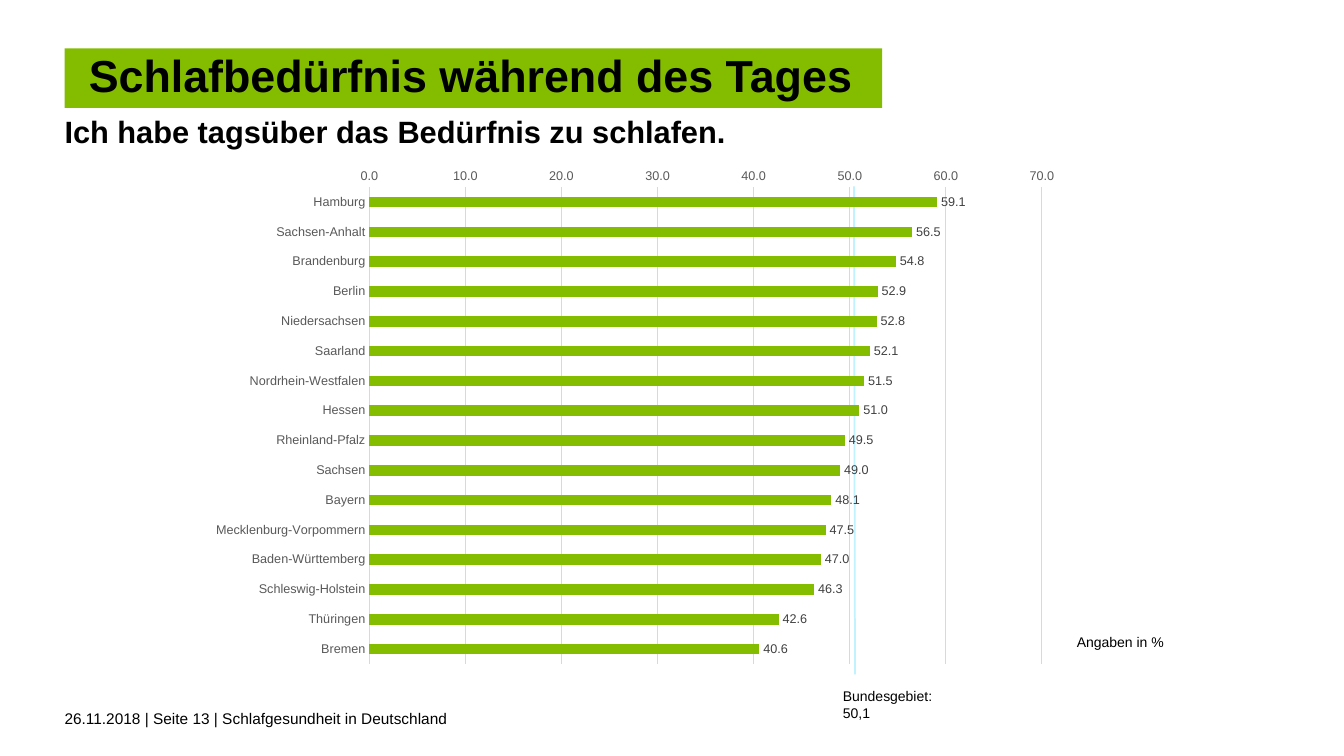
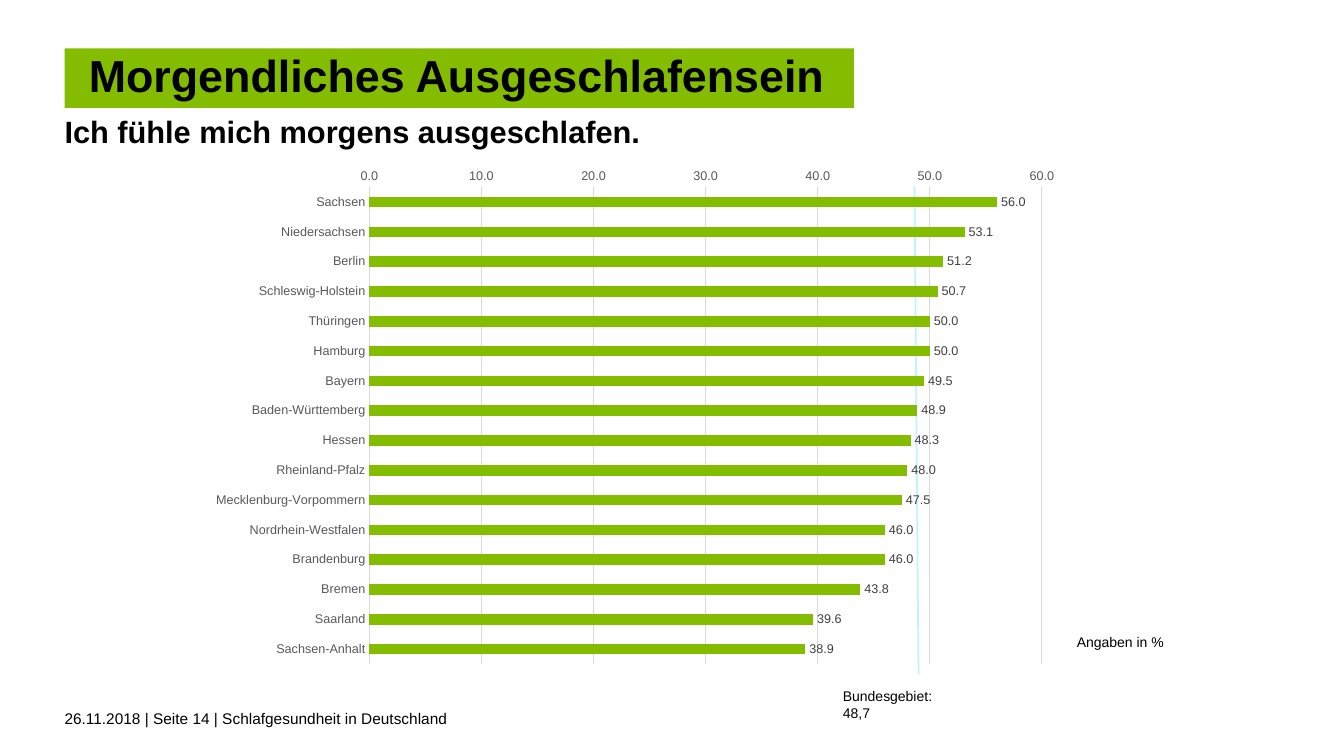
"""Build two bar-chart slides on sleep by German federal state."""
from pptx import Presentation
from pptx import util as u
from pptx.chart.data import CategoryChartData
from pptx.dml.color import RGBColor
from pptx.enum import chart as charts, shapes, text
from pptx.oxml import parse_xml
from pptx.oxml.ns import nsdecls, qn

FONT = "Arial"
GREEN, BLACK, LIGHT_BLUE = "84BD00", "000000", "C1F2FF"
AXIS_TEXT, LABEL_TEXT, GRID = "595959", "404040", "D9D9D9"
LEFT = 0.64
CHART_BOX = (1.97, 1.57, 8.66, 5.12)

SLIDES = [
    {
        "title": "Schlafbedürfnis während des Tages",
        "title_width": 8.11,
        "statement": "Ich habe tagsüber das Bedürfnis zu schlafen.",
        "page": 13,
        "average": "50,1",
        "average_line": (8.47, 8.48),
        "axis_maximum": 70,
        "values": {
            "Hamburg": 59.1, "Sachsen-Anhalt": 56.5, "Brandenburg": 54.8,
            "Berlin": 52.9, "Niedersachsen": 52.8, "Saarland": 52.1,
            "Nordrhein-Westfalen": 51.5, "Hessen": 51, "Rheinland-Pfalz": 49.5,
            "Sachsen": 49, "Bayern": 48.1, "Mecklenburg-Vorpommern": 47.5,
            "Baden-Württemberg": 47, "Schleswig-Holstein": 46.3,
            "Thüringen": 42.6, "Bremen": 40.6,
        },
    },
    {
        "title": "Morgendliches Ausgeschlafensein",
        "title_width": 7.83,
        "statement": "Ich fühle mich morgens ausgeschlafen.",
        "page": 14,
        "average": "48,7",
        "average_line": (9.07, 9.11),
        "axis_maximum": 60,
        "values": {
            "Sachsen": 56, "Niedersachsen": 53.1, "Berlin": 51.2,
            "Schleswig-Holstein": 50.7, "Thüringen": 50, "Hamburg": 50,
            "Bayern": 49.5, "Baden-Württemberg": 48.9, "Hessen": 48.3,
            "Rheinland-Pfalz": 48, "Mecklenburg-Vorpommern": 47.5,
            "Nordrhein-Westfalen": 46, "Brandenburg": 46, "Bremen": 43.8,
            "Saarland": 39.6, "Sachsen-Anhalt": 38.9,
        },
    },
]


def color(hex_string):
    """Return the colour for a hex string."""
    return RGBColor.from_string(hex_string)


def inches(values):
    """Convert numbers to lengths in inches."""
    return [u.Inches(value) for value in values]


def style_font(font, size, hex_string, bold=False):
    """Set the family, size, colour and weight of a font."""
    font.name = FONT
    font.size = u.Pt(size)
    font.bold = bold
    font.color.rgb = color(hex_string)


def style_line(line, hex_string, width):
    """Set the colour and width of a line."""
    line.color.rgb = color(hex_string)
    line.width = u.Pt(width)


def fill_text(shape, content, size, margins, bold=False, wrap=True):
    """Write one left-aligned paragraph into a fixed-size shape and return it."""
    frame = shape.text_frame
    frame.margin_left, frame.margin_right = inches(margins)
    frame.margin_top = frame.margin_bottom = u.Inches(0.05)
    frame.word_wrap = wrap
    frame.auto_size = text.MSO_AUTO_SIZE.NONE
    frame.text = content
    paragraph = frame.paragraphs[0]
    paragraph.alignment = text.PP_ALIGN.LEFT
    style_font(paragraph.runs[0].font, size, BLACK, bold)
    return paragraph


def place(shape, box):
    """Move and size a shape."""
    shape.left, shape.top, shape.width, shape.height = inches(box)


def add_title(slide, content, width):
    """Format the title placeholder as a green band."""
    title = slide.shapes.title
    place(title, (LEFT, 0.48, width, 0.59))
    title.fill.solid()
    title.fill.fore_color.rgb = color(GREEN)
    paragraph = fill_text(title, content, 32, (0.24, 0.24), bold=True, wrap=False)
    paragraph.line_spacing = 0.9
    title.text_frame.vertical_anchor = text.MSO_ANCHOR.MIDDLE


def add_statement(slide, content):
    """Format the body placeholder as the survey statement."""
    body = slide.placeholders[1]
    place(body, (LEFT, 1.13, 12.05, 0.3))
    paragraph = fill_text(body, content, 22, (0, 0.1), bold=True)
    properties = paragraph._p.get_or_add_pPr()
    properties.set("marL", "0")
    properties.set("indent", "0")
    properties.append(parse_xml(f"<a:buNone {nsdecls('a')}/>"))
    paragraph.line_spacing = u.Pt(21.6)
    paragraph.space_before = u.Pt(0)


def add_label(slide, content, box, size=10, margins=(0.24, 0.24)):
    """Add a small text box."""
    fill_text(slide.shapes.add_textbox(*inches(box)), content, size, margins)


def add_average_line(slide, top_x, bottom_x):
    """Add the line that marks the national average."""
    line = slide.shapes.add_connector(
        shapes.MSO_CONNECTOR.STRAIGHT, *inches((top_x, 1.85, bottom_x, 6.69)))
    style_line(line.line, LIGHT_BLUE, 1.25)
    line._element.spPr.append(parse_xml(f"<a:effectLst {nsdecls('a')}/>"))


def style_axis(axis):
    """Apply the look that both axes share."""
    axis.major_tick_mark = axis.minor_tick_mark = charts.XL_TICK_MARK.NONE
    style_font(axis.tick_labels.font, 9, AXIS_TEXT)


def add_state_chart(slide, values, maximum):
    """Add the bar chart with one bar for each state."""
    data = CategoryChartData(number_format="0.0")
    data.categories = list(values)
    data.add_series("Series 1", list(values.values()))
    chart = slide.shapes.add_chart(
        charts.XL_CHART_TYPE.BAR_CLUSTERED, *inches(CHART_BOX), data).chart
    chart.has_legend = chart.has_title = False
    style_font(chart.font, 10, BLACK)
    chart.element.find(qn("c:chart")).addnext(parse_xml(
        f"<c:spPr {nsdecls('c', 'a')}><a:noFill/><a:ln><a:noFill/></a:ln></c:spPr>"))

    states = chart.category_axis
    style_axis(states)
    states.reverse_order = True
    style_line(states.format.line, GRID, 0.75)

    scale = chart.value_axis
    style_axis(scale)
    scale.minimum_scale, scale.maximum_scale, scale.major_unit = 0, maximum, 10
    scale.tick_labels.number_format = "0.0"
    scale.tick_labels.number_format_is_linked = False
    scale.format.line.fill.background()
    style_line(scale.major_gridlines.format.line, GRID, 0.75)

    plot = chart.plots[0]
    plot.gap_width = 182
    plot.vary_by_categories = False
    bars = plot.series[0]
    bars.format.fill.solid()
    bars.format.fill.fore_color.rgb = color(GREEN)
    labels = bars.data_labels
    labels.show_value = True
    labels.number_format = "0.0"
    labels.number_format_is_linked = False
    labels.position = charts.XL_LABEL_POSITION.OUTSIDE_END
    style_font(labels.font, 9, LABEL_TEXT)


def add_slide(presentation, content):
    """Build one survey slide."""
    slide = presentation.slides.add_slide(presentation.slide_layouts[1])
    add_title(slide, content["title"], content["title_width"])
    add_statement(slide, content["statement"])
    add_label(slide,
              f"26.11.2018 | Seite {content['page']} | Schlafgesundheit in Deutschland",
              (LEFT, 6.99, 8, 0.4), size=11, margins=(0, 0.1))
    add_average_line(slide, *content["average_line"])
    add_label(slide, "Angaben in %", (10.44, 6.24, 1.83, 0.27))
    add_state_chart(slide, content["values"], content["axis_maximum"])
    add_label(slide, f"Bundesgebiet: {content['average']}", (8.12, 6.77, 1.66, 0.27))


def main():
    """Build and save the presentation."""
    presentation = Presentation()
    presentation.slide_width, presentation.slide_height = inches((13.33, 7.5))
    for content in SLIDES:
        add_slide(presentation, content)
    presentation.save("out.pptx")


if __name__ == "__main__":
    main()
